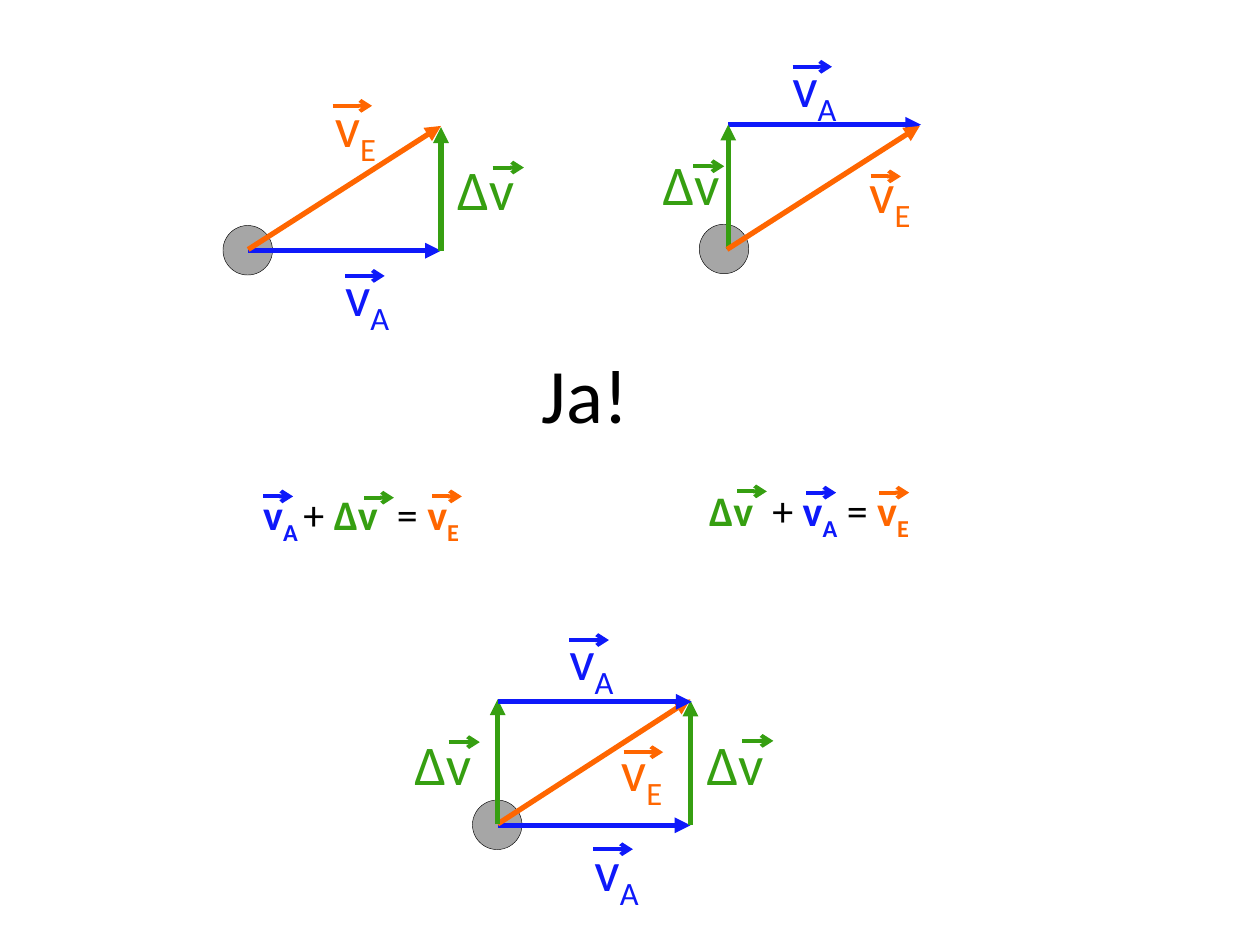
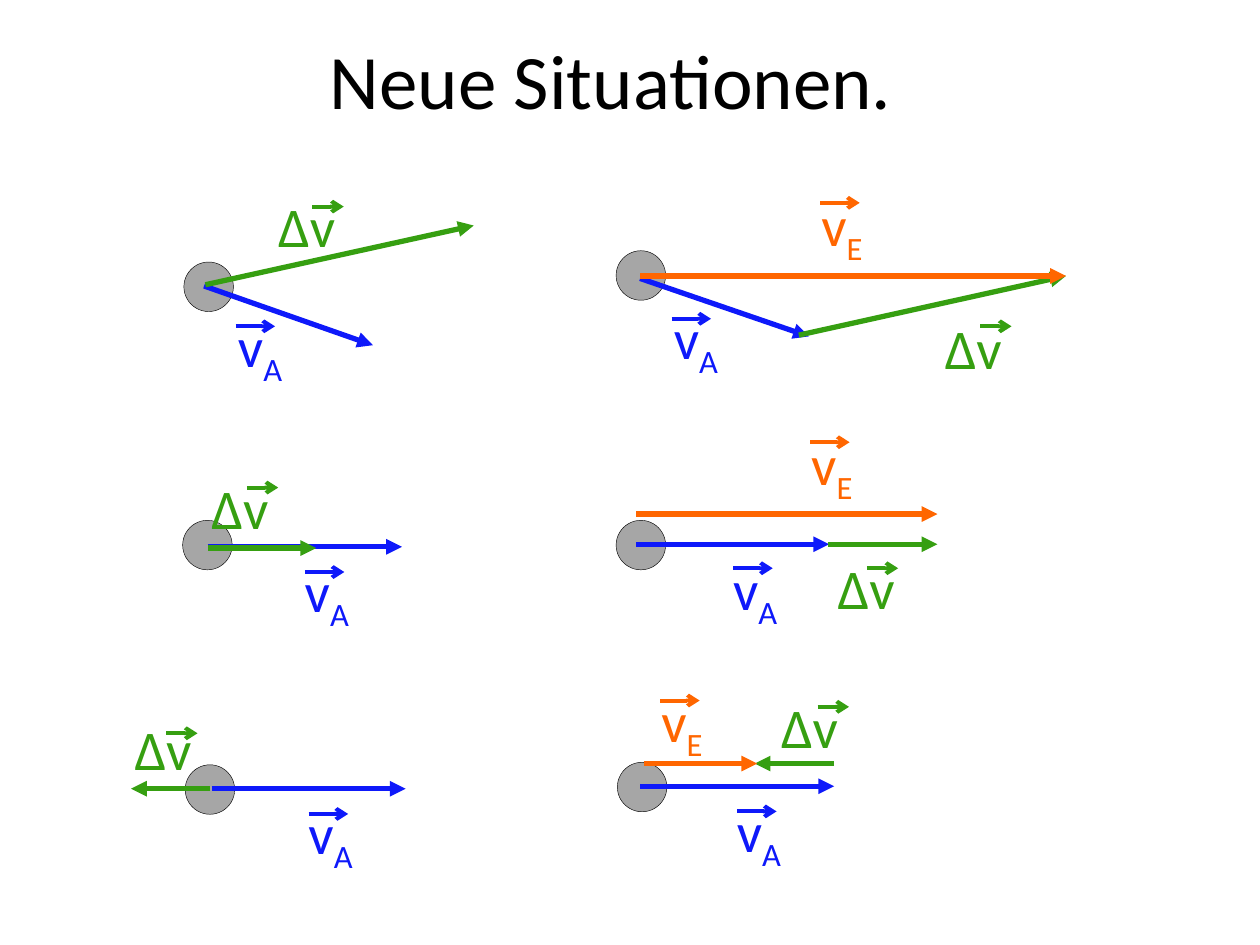
from lxml import etree
from pptx import Presentation
from pptx import util as u
from pptx.dml.color import RGBColor
from pptx.enum import shapes, text
from pptx.oxml import ns

BLUE = RGBColor(0x0E, 0x19, 0xFA)
GREEN = RGBColor(0x36, 0x9F, 0x11)
ORANGE = RGBColor(0xFF, 0x66, 0x00)
GREY = RGBColor(0xA6, 0xA6, 0xA6)
BLACK = RGBColor(0, 0, 0)

COLS, ROWS = 100, 75
BALL = 3.93

# kind: colour, symbol, subscript, label width, length of the mark above the v
KINDS = {
    "A": (BLUE, "v", "A", 9.4, 3.13),
    "D": (GREEN, "Δv", "", 7.5, 2.48),
    "E": (ORANGE, "v", "E", 9.4, 3.13),
}
FONTS = {
    "title": {"name": "Calibri", "size": u.Pt(44), "bold": False},
    "label": {"name": "Calibri", "size": u.Pt(32), "bold": False},
    "term": {"name": "Calibri", "size": u.Pt(24), "bold": True},
    "sign": {"name": "Calibri", "size": u.Pt(24), "bold": False},
}
# Spaces of special width inside a sum
GAPS = {"wide": {"spc": 540}, "thin": {"baseline": -25000}}


def put(item, values):
    for name, value in values.items():
        setattr(item, name, value)


class Sheet:
    """Draws on the current slide; lengths are grid columns and rows."""

    def __init__(self):
        self.deck = Presentation()
        put(self.deck, {"slide_width": u.Inches(10), "slide_height": u.Inches(7.5)})
        self.col = self.deck.slide_width / COLS
        self.row = self.deck.slide_height / ROWS

    def start(self):
        self.slide = self.deck.slides.add_slide(self.deck.slide_layouts[6])

    def span(self, *sizes):
        """Turn alternating columns and rows into slide lengths."""
        return [round(size * (self.row if i % 2 else self.col))
                for i, size in enumerate(sizes)]

    def box(self, *area, **frame):
        item = self.slide.shapes.add_textbox(*self.span(*area)).text_frame
        put(item, {"word_wrap": True, **frame})
        return item.paragraphs[0]

    def say(self, line, words, style, color, **extra):
        """Add a run; extra holds raw run settings such as baseline."""
        run = line.add_run()
        run.text = words
        put(run.font, FONTS[style])
        run.font.color.rgb = color
        for name, value in extra.items():
            run._r.get_or_add_rPr().set(name, str(value))

    def title(self, words, *area):
        line = self.box(*area, vertical_anchor=text.MSO_ANCHOR.MIDDLE)
        line.alignment = text.PP_ALIGN.CENTER
        self.say(line, words, "title", BLACK)

    def ball(self, x, y):
        item = self.slide.shapes.add_shape(
            shapes.MSO_SHAPE.OVAL, *self.span(x, y, BALL, BALL))
        item.shadow.inherit = False
        item.fill.solid()
        item.fill.fore_color.rgb = GREY
        item.line.color.rgb = BLACK
        item.line.width = u.Pt(0.25)

    def arrow(self, ends, color, width=3, head="triangle"):
        item = self.slide.shapes.add_connector(
            shapes.MSO_CONNECTOR.STRAIGHT, *self.span(*ends))
        item.line.color.rgb = color
        item.line.width = u.Pt(width)
        tip = etree.SubElement(item.line._get_or_add_ln(), ns.qn("a:tailEnd"))
        tip.set("type", head)
        etree.SubElement(item._element.spPr, ns.qn("a:effectLst"))

    def mark(self, kind, x, y, size=None):
        """Draw the small arrow over a symbol."""
        color, *_, width = KINDS[kind]
        self.arrow((x, y, x + (size or width), y), color, 2.25, "arrow")

    def term(self, line, kind, style):
        color, name, sub, *_ = KINDS[kind]
        self.say(line, name, style, color)
        if sub:
            self.say(line, sub, style, color, baseline=-25000)

    def vector(self, kind, ends, label, mark):
        self.arrow(ends, KINDS[kind][0])
        line = self.box(*label, KINDS[kind][3], 6.4,
                        auto_size=text.MSO_AUTO_SIZE.SHAPE_TO_FIT_TEXT)
        self.term(line, kind, "label")
        self.mark(kind, *mark)

    def sum(self, x, y, parts, marks):
        """Set a vector sum: kinds become symbols, other parts are signs."""
        line = self.box(x, y, 19.9, 5,
                        auto_size=text.MSO_AUTO_SIZE.SHAPE_TO_FIT_TEXT)
        for part in parts:
            if part in KINDS:
                self.term(line, part, "term")
            elif part in GAPS:
                self.say(line, " ", "sign", BLACK, **GAPS[part])
            else:
                self.say(line, part, "sign", BLACK)
        for kind, left, top in marks:
            self.mark(kind, left, top, 2.36)


# Each vector: kind, arrow ends, label corner, mark start (and length)
ANSWER = [
    ((17.7, 17.9), [
        ("A", (19.7, 19.9, 35, 19.9), (26.4, 20.2), (27.4, 21.9)),
        ("D", (35, 19.9, 35, 10.1), (35.3, 11.8), (39.1, 13.3)),
        ("E", (19.7, 19.8, 35, 10), (25.6, 6.8), (26.4, 8.4)),
    ]),
    ((55.5, 17.8), [
        ("A", (57.8, 9.9, 73.1, 9.9), (61.9, 3.6), (62.9, 5.3)),
        ("D", (57.8, 19.8, 57.8, 9.9), (51.6, 11.4), (55, 13.2)),
        ("E", (57.7, 19.8, 73, 10), (68, 12), (69.1, 14, 2.4)),
    ]),
    ((37.5, 63.5), [
        ("A", (39.5, 65.5, 54.8, 65.5), (46.2, 65.8), (47.1, 67.4)),
        ("D", (54.8, 65.5, 54.8, 55.6), (55.1, 57.4), (58.9, 58.8)),
        ("E", (39.5, 65.4, 54.8, 55.5), (48.3, 57.9), (49.5, 59.7)),
        ("D", (39.5, 65.4, 39.5, 55.5), (31.9, 57.4), (35.6, 58.9)),
        ("A", (39.5, 55.7, 54.9, 55.7), (44.2, 49.1), (45.2, 50.8)),
    ]),
]
SUMS = [
    (19.9, 38.3, ["A", "thin", "+ ", "D", "wide", "= ", "E"],
     [("A", 20.9, 39.4), ("D", 28.9, 39.5), ("E", 34.3, 39.4)]),
    (55.3, 38, ["D", "wide", "+ ", "A", " = ", "E"],
     [("A", 64, 39.1), ("D", 58.5, 39), ("E", 69.8, 39.1)]),
]
CASES = [
    ((14.5, 41.3), [
        ("A", (16.5, 43.4, 31.9, 43.4), (23.2, 43.7), (24.2, 45.4)),
        ("D", (16.5, 43.5, 25.1, 43.5), (15.8, 37.1), (19.6, 38.7)),
    ]),
    ((48.9, 41.3), [
        ("A", (50.5, 43.2, 65.8, 43.2), (57.2, 43.5), (58.2, 45.1)),
        ("D", (65.7, 43.2, 74.4, 43.2), (65.5, 43.4), (68.8, 45.1)),
        ("E", (50.5, 40.8, 74.4, 40.8), (63.4, 33.6), (64.3, 35.1)),
    ]),
    ((14.6, 20.8), [
        ("A", (16.2, 22.7, 29.6, 27.4), (17.9, 24.2), (18.7, 25.9)),
        ("D", (16.3, 22.6, 37.6, 17.9), (21.1, 14.7), (24.8, 16.4)),
    ]),
    ((48.9, 19.9), [
        ("A", (50.8, 22.1, 64.2, 26.7), (52.5, 23.6), (53.3, 25.3)),
        ("D", (63.4, 26.6, 84.6, 21.9), (74, 24.4), (77.8, 25.9)),
        ("E", (50.8, 21.9, 84.6, 21.9), (64.2, 14.6), (65.1, 16.1)),
    ]),
    ((14.7, 60.7), [
        ("A", (16.8, 62.6, 32.2, 62.6), (23.5, 62.9), (24.5, 64.6)),
        ("D", (16.7, 62.6, 10.4, 62.6), (9.7, 56.2), (13.2, 58.2)),
    ]),
    ((49, 60.5), [
        ("A", (50.8, 62.4, 66.2, 62.4), (57.5, 62.7), (58.5, 64.4)),
        ("D", (66.2, 60.6, 59.9, 60.6), (61, 54.5), (64.9, 56.1)),
        ("E", (51.1, 60.6, 60.1, 60.6), (51.5, 54), (52.4, 55.6)),
    ]),
]


def draw(sheet, scenes):
    for ball, vectors in scenes:
        sheet.ball(*ball)
        for vector in vectors:
            sheet.vector(*vector)


def main():
    sheet = Sheet()
    sheet.start()
    sheet.title("Ja!", 28.9, 24.9, 35.1, 12.5)
    draw(sheet, ANSWER)
    for item in SUMS:
        sheet.sum(*item)

    sheet.start()
    sheet.title("Neue Situationen.", 3.5, 0, 90, 12.5)
    draw(sheet, CASES)
    sheet.deck.save("out.pptx")


if __name__ == "__main__":
    main()
